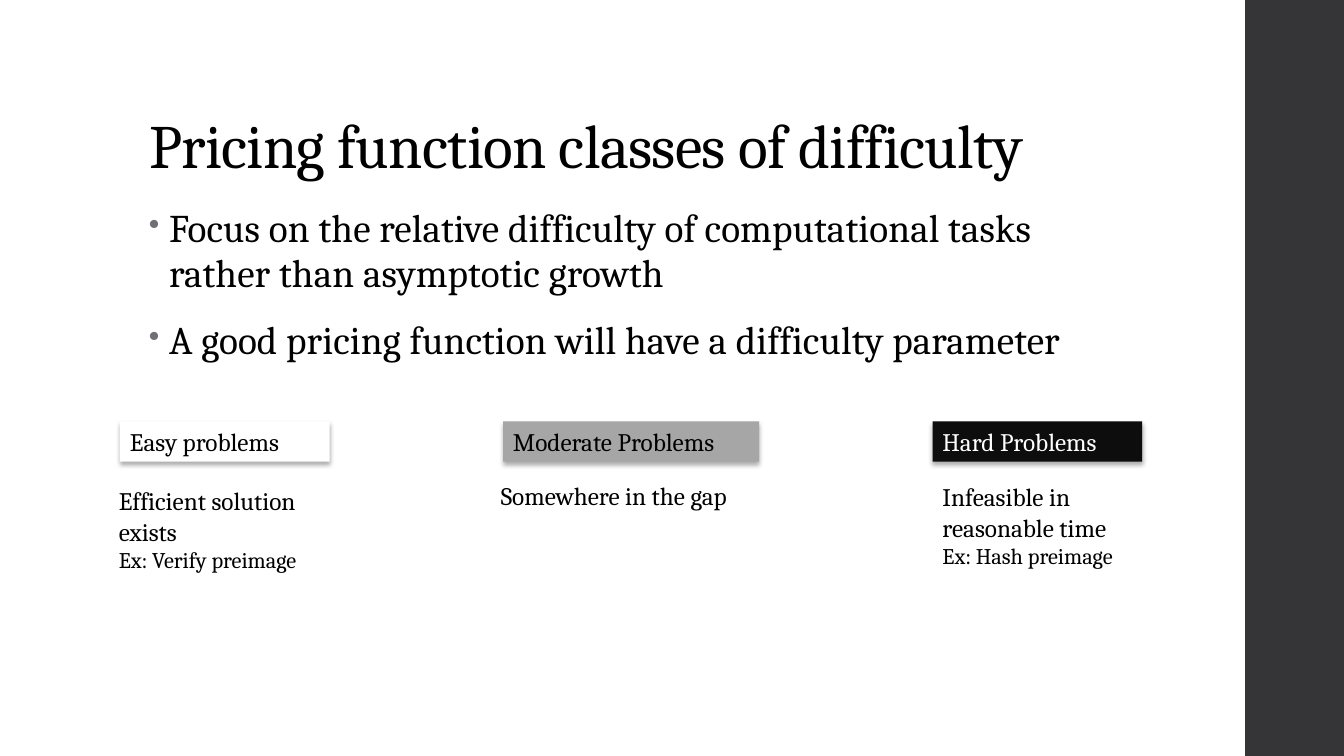
from lxml import etree
from pptx import Presentation
from pptx.dml.color import RGBColor
from pptx.enum.shapes import MSO_SHAPE
from pptx.enum.text import MSO_ANCHOR, MSO_AUTO_SIZE, PP_ALIGN
from pptx.oxml.ns import qn
from pptx.util import Inches, Pt

RECTANGLE = MSO_SHAPE.RECTANGLE
LEFT = PP_ALIGN.LEFT
TOP, BOTTOM = MSO_ANCHOR.TOP, MSO_ANCHOR.BOTTOM
FIXED, GROW = MSO_AUTO_SIZE.NONE, MSO_AUTO_SIZE.SHAPE_TO_FIT_TEXT

COLORS = {
    "black": "000000",
    "white": "FFFFFF",
    "sidebar": "353537",
    "bullet": "6F6F74",
    "moderate": "A6A6A6",
    "hard": "0D0D0D",
}


class DifficultySlide:
    font = "Cambria"

    def __init__(self, deck):
        self.width, self.height = deck.slide_width, deck.slide_height
        self.page = deck.slides.add_slide(deck.slide_layouts[5])

    def place(self, left, top, width, height):
        return (
            round(self.width * left / 100),
            round(self.height * top / 100),
            round(self.width * width / 100),
            round(self.height * height / 100),
        )

    def fill_text(self, shape, lines, sizes, color="black", anchor=TOP, fit=GROW, spacing=0):
        frame = shape.text_frame
        frame.text = "\n".join(lines)
        frame.word_wrap = True
        frame.auto_size = fit
        frame.vertical_anchor = anchor
        for para, size in zip(frame.paragraphs, sizes):
            para.alignment = LEFT
            for span in para.runs:
                span.font.name = self.font
                span.font.size = Pt(size)
                span.font.color.rgb = RGBColor.from_string(COLORS[color])
                if spacing:
                    span._r.get_or_add_rPr().set("spc", str(spacing))
        return frame

    def title(self, text, *area):
        box = self.page.shapes.title
        box.left, box.top, box.width, box.height = self.place(*area)
        frame = self.fill_text(box, [text], [44], anchor=BOTTOM, fit=FIXED, spacing=-50)
        frame.paragraphs[0].line_spacing = 0.9

    def bullets(self, lines, *area):
        box = self.page.shapes.add_textbox(*self.place(*area))
        frame = self.fill_text(box, lines, [28] * len(lines), fit=FIXED, spacing=10)
        for para in frame.paragraphs:
            para.line_spacing = 0.95
            para.space_before, para.space_after = Pt(14), Pt(2)
            properties = para._p.get_or_add_pPr()
            properties.set("marL", str(Inches(0.2)))
            properties.set("indent", str(Inches(-0.2)))
            color = etree.SubElement(properties, qn("a:buClr"))
            etree.SubElement(color, qn("a:srgbClr"), val=COLORS["bullet"])
            etree.SubElement(properties, qn("a:buSzPct"), val="80000")
            etree.SubElement(properties, qn("a:buChar"), char="•")

    def bar(self, fill, *area):
        box = self.page.shapes.add_shape(RECTANGLE, *self.place(*area))
        box.shadow.inherit = False
        box.fill.solid()
        box.fill.fore_color.rgb = RGBColor.from_string(COLORS[fill])
        box.line.fill.background()
        return box

    def label(self, text, fill, color, *area):
        box = self.bar(fill, *area)
        self.fill_text(box, [text], [18], color)
        effects = box._element.spPr.find(qn("a:effectLst"))
        shadow = etree.SubElement(
            effects, qn("a:outerShdw"), blurRad=str(Pt(3.5)), dist=str(Pt(2.2)),
            dir="5400000", algn="ctr", rotWithShape="0",
        )
        tint = etree.SubElement(shadow, qn("a:srgbClr"), val=COLORS["black"])
        etree.SubElement(tint, qn("a:alpha"), val="32000")

    def note(self, lines, *area):
        box = self.page.shapes.add_textbox(*self.place(*area))
        self.fill_text(box, lines, [18, 16])


def main():
    deck = Presentation()
    deck.slide_width, deck.slide_height = Inches(13.33), Inches(7.5)
    slide = DifficultySlide(deck)
    slide.bar("sidebar", 92.65, 0, 7.35, 100)
    slide.title("Pricing function classes of difficulty", 10.35, 5.33, 79.5, 19.33)
    slide.bullets(
        [
            "Focus on the relative difficulty of computational tasks rather than asymptotic growth",
            "A good pricing function will have a difficulty parameter",
        ],
        10.35, 26.67, 70.5, 63.47,
    )

    label_top, label_height = 55.73, 5.33
    for text, fill, color, left, width in (
        ("Hard Problems", "hard", "white", 69.39, 15.6),
        ("Easy problems", "white", "black", 8.93, 15.6),
        ("Moderate Problems", "moderate", "black", 37.43, 19.05),
    ):
        slide.label(text, fill, color, left, label_top, width, label_height)

    slide.note(["Somewhere in the gap"], 36.53, 62.93, 21.46, 5.33)
    slide.note(["Efficient solution exists", "Ex: Verify preimage"], 8.1, 63.6, 17.18, 13.07)
    slide.note(["Infeasible in reasonable time", "Ex: Hash preimage"], 69.39, 63.07, 18.53, 13.47)
    deck.save("out.pptx")


if __name__ == "__main__":
    main()
